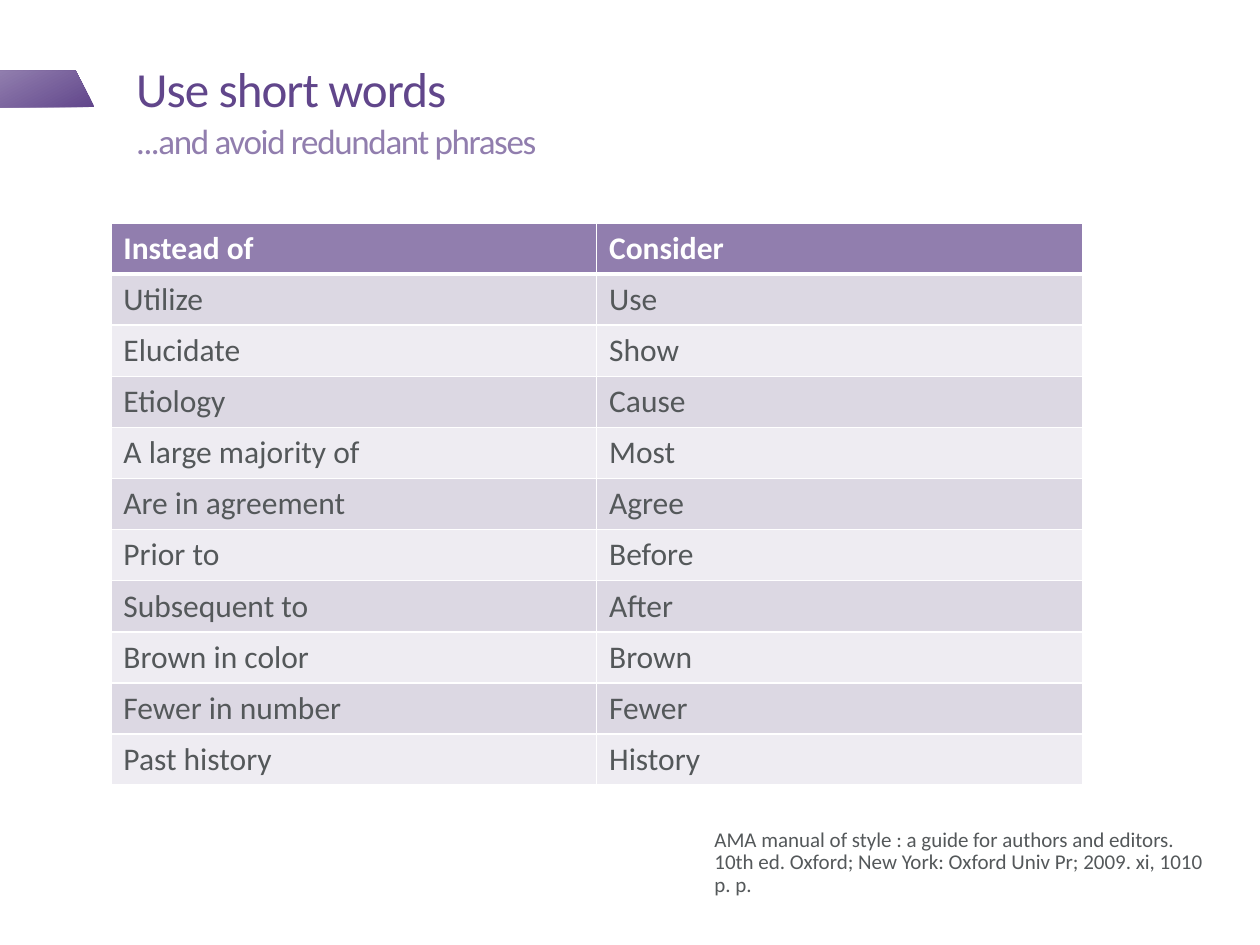
from dataclasses import dataclass
from typing import NamedTuple

from lxml.etree import SubElement
from pptx import Presentation
from pptx.dml.color import RGBColor as Rgb
from pptx.enum.text import MSO_ANCHOR as Anchor, MSO_AUTO_SIZE as AutoSize, PP_ALIGN as Align
from pptx.oxml.ns import qn
from pptx.util import Inches, Pt


@dataclass(frozen=True)
class Theme:
    font: str = "Calibri"
    deep: str = "61468B"
    accent: str = "917EAE"
    ink: str = "54585A"
    white: str = "FFFFFF"
    bands: tuple = ("DCD8E3", "EEECF2")
    title_size: int = 28
    subtitle_size: int = 20
    table_size: int = 18
    citation_size: int = 12
    rule: int = 1
    header_rule: int = 3


class Box(NamedTuple):
    left: float
    top: float
    width: float
    height: float


class Wording(NamedTuple):
    wordy: str
    short: str


THEME = Theme()
WORDINGS = [
    Wording("Instead of", "Consider"),
    Wording("Utilize", "Use"),
    Wording("Elucidate", "Show"),
    Wording("Etiology", "Cause"),
    Wording("A large majority of", "Most"),
    Wording("Are in agreement", "Agree"),
    Wording("Prior to", "Before"),
    Wording("Subsequent to", "After"),
    Wording("Brown in color", "Brown"),
    Wording("Fewer in number", "Fewer"),
    Wording("Past history", "History"),
]


def write(frame, text: str, *, size: int, color: str, bold: bool = False,
          line_spacing: float = 1.0, tracking: float = 0) -> None:
    paragraph = frame.paragraphs[0]
    properties = paragraph._p.get_or_add_pPr()
    properties.set("marL", "0")
    properties.set("indent", "0")
    paragraph.alignment = Align.LEFT
    paragraph.line_spacing = line_spacing
    paragraph.space_before = Pt(0)
    SubElement(properties, qn("a:buNone"))
    run = paragraph.add_run()
    run.text = text
    run.font.name = THEME.font
    run.font.size = Pt(size)
    run.font.bold = bold
    run.font.color.rgb = Rgb.from_string(color)
    if tracking:
        run._r.get_or_add_rPr().set("spc", str(round(tracking * 100)))


def place(holder, box: Box, anchor: Anchor, right: float = 0.1, bottom: float = 0.05):
    holder.left, holder.top, holder.width, holder.height = map(Inches, box)
    frame = holder.text_frame
    frame.word_wrap = True
    frame.auto_size = AutoSize.NONE
    frame.vertical_anchor = anchor
    frame.margin_left = frame.margin_top = 0
    frame.margin_right, frame.margin_bottom = Inches(right), Inches(bottom)
    return frame


def draw_tab(slide) -> None:
    outline = slide.shapes.build_freeform(0, Inches(0.56))
    corners = [(0.6, 0.56), (0.75, 0.85), (0, 0.85)]
    outline.add_line_segments([(Inches(x), Inches(y)) for x, y in corners], close=True)
    tab = outline.convert_to_shape()
    tab.shadow.inherit = False
    tab.line.fill.background()
    tab.fill.gradient()
    tab.fill.gradient_angle = 118
    for stop, color in zip(tab.fill.gradient_stops, (THEME.deep, THEME.accent)):
        stop.color.rgb = Rgb.from_string(color)


def draw_borders(cell, top: int, bottom: int) -> None:
    properties = cell._tc.get_or_add_tcPr()
    sides = {"L": THEME.rule, "R": THEME.rule, "T": top, "B": bottom}
    for side, width in sides.items():
        line = SubElement(properties, qn(f"a:ln{side}"), w=str(Pt(width)))
        fill = SubElement(line, qn("a:solidFill"))
        SubElement(fill, qn("a:srgbClr"), val=THEME.white)


def draw_wordings(slide, box: Box) -> None:
    table = slide.shapes.add_table(len(WORDINGS), 2, *map(Inches, box)).table
    for row, wording in enumerate(WORDINGS):
        header = row == 0
        band = THEME.accent if header else THEME.bands[(row - 1) % 2]
        for column, text in enumerate(wording):
            cell = table.cell(row, column)
            draw_borders(cell, top=THEME.header_rule if row == 1 else THEME.rule,
                         bottom=THEME.header_rule if header else THEME.rule)
            cell.fill.solid()
            cell.fill.fore_color.rgb = Rgb.from_string(band)
            write(cell.text_frame, text, size=THEME.table_size, bold=header,
                  color=THEME.white if header else THEME.ink)


def main() -> None:
    deck = Presentation()
    deck.slide_width, deck.slide_height = Inches(10), Inches(7.5)
    slide = deck.slides.add_slide(deck.slide_layouts[1])

    draw_tab(slide)
    title = place(slide.shapes.title, Box(1.08, 0.15, 8.44, 0.83), Anchor.BOTTOM)
    write(title, "Use short words", size=THEME.title_size, color=THEME.deep,
          line_spacing=0.85, tracking=-0.5)
    subtitle = place(slide.placeholders[1], Box(1.08, 1, 7.5, 0.5), Anchor.TOP)
    write(subtitle, "...and avoid redundant phrases", size=THEME.subtitle_size,
          color=THEME.accent, line_spacing=0.85, tracking=-0.8)
    draw_wordings(slide, Box(0.88, 1.77, 7.71, 4.46))
    citation_box = Box(5.67, 6.58, 3.92, 0.58)
    citation = place(slide.shapes.add_textbox(*map(Inches, citation_box)), citation_box,
                     Anchor.TOP, right=0, bottom=0)
    write(citation, "AMA manual of style : a guide for authors and editors. 10th ed. "
          "Oxford; New York: Oxford Univ Pr; 2009. xi, 1010 p. p.",
          size=THEME.citation_size, color=THEME.ink, line_spacing=0.9)

    deck.save("out.pptx")


if __name__ == "__main__":
    main()
